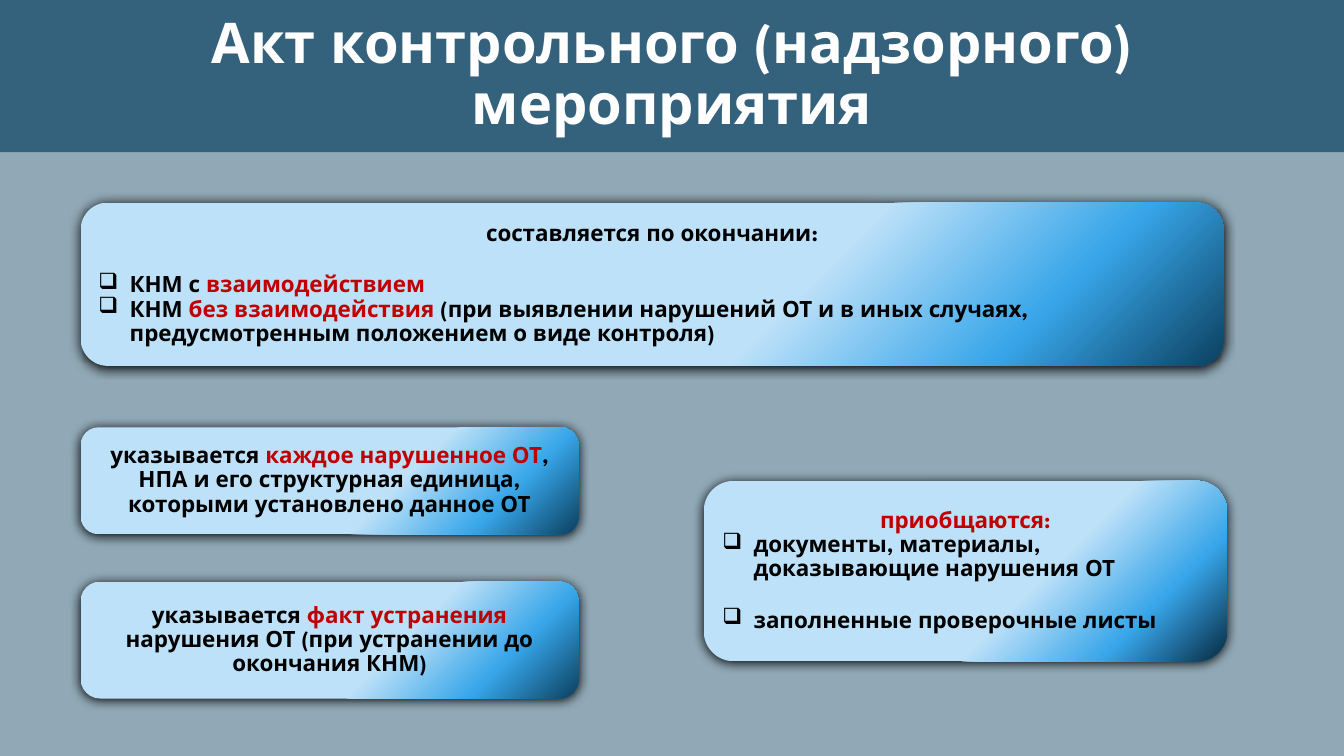
import copy

import lxml.etree
import pptx
import pptx.dml.color
import pptx.enum.shapes
import pptx.enum.text
import pptx.oxml.ns
import pptx.util

RGB = pptx.dml.color.RGBColor
BACK = RGB(0x91, 0xA9, 0xB7)
BAND = RGB(0x34, 0x61, 0x7B)
PALE = RGB(0xBD, 0xE1, 0xF8)
BLUE = RGB(0x38, 0xA6, 0xE9)
NAVY = RGB(0x0B, 0x40, 0x60)
DARK = RGB(0x07, 0x2A, 0x40)
RED = RGB(0xC0, 0x00, 0x00)
BLACK = RGB(0x00, 0x00, 0x00)
WHITE = RGB(0xFF, 0xFF, 0xFF)
FACE = "League Spartan"
WIDE = pptx.util.Inches(13.33)
HIGH = pptx.util.Inches(7.5)
LEFT = 6
HALF = 37.05
ALIGN = pptx.enum.text.PP_ALIGN
GAP = pptx.util.Pt(19.3)


def place(left, top, width, height):
    return (int(WIDE * left / 100), int(HIGH * top / 100),
            int(WIDE * width / 100), int(HIGH * height / 100))


def add_run(para, text, color, size=16):
    run = para.add_run()
    run.text = text
    run.font.name = FACE
    run.font.size = pptx.util.Pt(size)
    run.font.bold = True
    run.font.color.rgb = color


def add_mark(para):
    props = para._p.get_or_add_pPr()
    indent = pptx.util.Inches(0.31)
    props.set("marL", str(indent))
    props.set("indent", str(-indent))
    mark = lxml.etree.SubElement(props, pptx.oxml.ns.qn("a:buChar"))
    mark.set("char", "❑")


def add_glow(shape):
    shape.shadow.inherit = False
    qn = pptx.oxml.ns.qn
    effects = shape._element.spPr.find(qn("a:effectLst"))
    shade = lxml.etree.SubElement(
        effects, qn("a:outerShdw"), blurRad=str(pptx.util.Pt(8.5)),
        dist=str(pptx.util.Pt(1)), dir="5400000", algn="t", rotWithShape="0")
    lxml.etree.SubElement(shade, qn("a:srgbClr"), val=str(BLACK))


def blend(shape, end):
    shape.fill.gradient()
    shape.fill.gradient_angle = 315
    stops = shape._element.spPr.find(".//" + pptx.oxml.ns.qn("a:gsLst"))
    stops.append(copy.deepcopy(stops[0]))
    tints = ((0.62, PALE), (0.82, BLUE), (1, end))
    for stop, (share, color) in zip(shape.fill.gradient_stops, tints):
        stop.position = share
        stop.color.rgb = color


def add_card(slide, area, lines, end=NAVY):
    card = slide.shapes.add_shape(
        pptx.enum.shapes.MSO_SHAPE.ROUNDED_RECTANGLE, *place(*area))
    blend(card, end)
    card.line.fill.background()
    add_glow(card)
    frame = card.text_frame
    frame.word_wrap = True
    frame.vertical_anchor = pptx.enum.text.MSO_ANCHOR.MIDDLE
    for index, (listed, gap, runs) in enumerate(lines):
        para = frame.add_paragraph() if index else frame.paragraphs[0]
        para.alignment = ALIGN.LEFT if listed else ALIGN.CENTER
        para.line_spacing = 0.9
        if gap:
            para.space_before = GAP
        if listed:
            add_mark(para)
        for text, color in runs:
            add_run(para, text, color)


def add_title(slide, text):
    title = slide.shapes.title
    title.left, title.top, title.width, title.height = place(0, 0, 100, 20.13)
    title.fill.solid()
    title.fill.fore_color.rgb = BAND
    frame = title.text_frame
    frame.word_wrap = True
    frame.vertical_anchor = pptx.enum.text.MSO_ANCHOR.MIDDLE
    para = frame.paragraphs[0]
    para.alignment = ALIGN.CENTER
    para.line_spacing = 0.9
    add_run(para, text, WHITE, 40)


def main():
    deck = pptx.Presentation()
    deck.slide_width, deck.slide_height = WIDE, HIGH
    slide = deck.slides.add_slide(deck.slide_layouts[5])
    slide.background.fill.solid()
    slide.background.fill.fore_color.rgb = BACK
    add_title(slide, "Акт контрольного (надзорного) мероприятия")
    add_card(slide, (LEFT, 26.8, 85.05, 21.6), [
        (False, False, [("составляется по окончании:", BLACK)]),
        (True, True, [("КНМ с ", BLACK), ("взаимодействием", RED)]),
        (True, False, [
            ("КНМ ", BLACK), ("без взаимодействия ", RED),
            ("(при выявлении нарушений ОТ и в иных случаях, "
             "предусмотренным положением о виде контроля)", BLACK)]),
    ])
    add_card(slide, (LEFT, 56.53, HALF, 14.13), [
        (False, False, [
            ("указывается ", BLACK), ("каждое нарушенное ОТ", RED),
            (", НПА и его структурная единица, "
             "которыми установлено данное ОТ", BLACK)]),
    ])
    add_card(slide, (LEFT, 76.93, HALF, 15.47), [
        (False, False, [
            ("указывается ", BLACK), ("факт устранения ", RED),
            ("нарушения ОТ (при устранении до окончания КНМ)", BLACK)]),
    ])
    add_card(slide, (52.36, 63.6, 38.93, 23.87), [
        (False, False, [("приобщаются:", RED)]),
        (True, False, [
            ("документы, материалы, доказывающие нарушения ОТ", BLACK)]),
        (True, True, [("заполненные проверочные листы", BLACK)]),
    ], DARK)
    deck.save("out.pptx")


if __name__ == "__main__":
    main()
